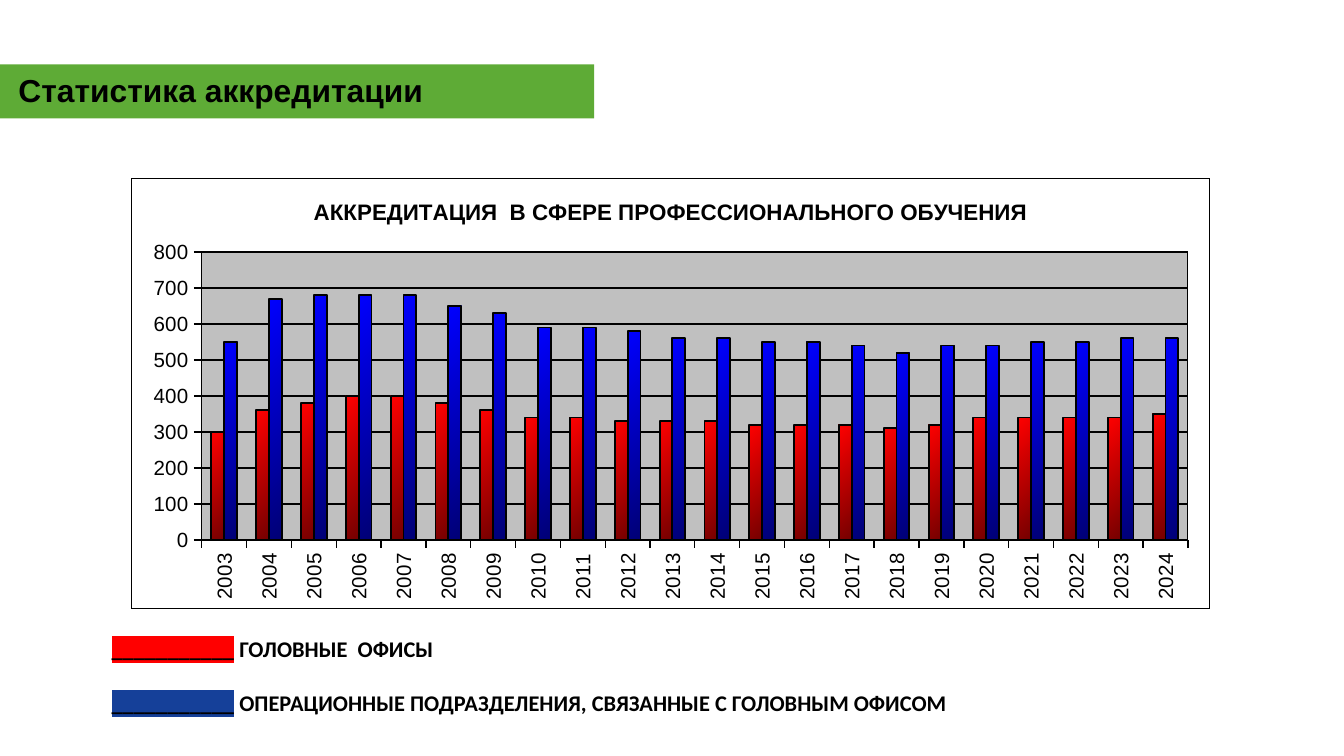
from lxml.etree import SubElement as Sub
from pptx import Presentation
from pptx.chart.data import CategoryChartData as Data
from pptx.dml.color import RGBColor
from pptx.enum.chart import XL_CHART_TYPE as Kind, XL_TICK_MARK as Tick
from pptx.enum.shapes import MSO_SHAPE as Form
from pptx.oxml import parse_xml
from pptx.oxml.ns import nsdecls, qn
from pptx.util import Cm, Pt

BLACK = RGBColor(0, 0, 0)
WHITE = RGBColor(0xFF, 0xFF, 0xFF)
GREEN = RGBColor(0x5E, 0xAB, 0x36)
GRAY = RGBColor(0xC0, 0xC0, 0xC0)
RED = RGBColor(0xFF, 0, 0)
MAROON = RGBColor(0x75, 0, 0)
BLUE = RGBColor(0, 0, 0xFF)
NAVY = RGBColor(0, 0, 0x75)
ROYAL = RGBColor(0x15, 0x40, 0x99)

HEAD = "Статистика аккредитации"
TITLE = "АККРЕДИТАЦИЯ  В СФЕРЕ ПРОФЕССИОНАЛЬНОГО ОБУЧЕНИЯ"
YEARS = [str(year) for year in range(2003, 2025)]
SERIES = [
    ("Series 1", MAROON, RED,
     [300, 360, 380, 400, 400, 380, 360, 340, 340, 330, 330,
      330, 320, 320, 320, 310, 320, 340, 340, 340, 340, 350]),
    ("Series 2", NAVY, BLUE,
     [550, 670, 680, 680, 680, 650, 630, 590, 590, 580, 560,
      560, 550, 550, 540, 520, 540, 540, 550, 550, 560, 560]),
]
KEYS = [
    (RED, "ГОЛОВНЫЕ  ОФИСЫ"),
    (ROYAL, "ОПЕРАЦИОННЫЕ ПОДРАЗДЕЛЕНИЯ, СВЯЗАННЫЕ С ГОЛОВНЫМ ОФИСОМ"),
]
PLOT = {"x": 0.065, "y": 0.17, "w": 0.915, "h": 0.67}


def style(font, size, face="Arial", bold=False):
    font.size, font.name, font.bold = Pt(size), face, bold
    font.color.rgb = BLACK


def write(para, text, size=12, face="Arial", bold=True, mark=None):
    run = para.add_run()
    run.text = text
    style(run.font, size, face, bold)
    if mark is not None:
        tint = parse_xml(f'<a:highlight {nsdecls("a")}><a:srgbClr val="{mark}"/></a:highlight>')
        run.font._element.find(qn("a:latin")).addprevious(tint)


def add_box(slide, place, pad):
    frame = slide.shapes.add_textbox(*map(Cm, place)).text_frame
    frame.word_wrap = True
    frame.margin_left = frame.margin_right = Cm(pad)
    frame.margin_top = frame.margin_bottom = Cm(pad / 2)
    return frame


def area(fill, edge=BLACK):
    return parse_xml(
        f'<c:spPr {nsdecls("c", "a")}><a:solidFill><a:srgbClr val="{fill}"/></a:solidFill>'
        f'<a:ln w="0"><a:solidFill><a:srgbClr val="{edge}"/></a:solidFill></a:ln></c:spPr>')


def set_plot(chart):
    root = chart.element
    root.find(qn("c:chart")).addnext(area(WHITE))
    plot = root.find(".//" + qn("c:plotArea"))
    for old in plot.findall(qn("c:layout")):
        plot.remove(old)
    lay = parse_xml(f'<c:layout {nsdecls("c")}/>')
    hand = Sub(lay, qn("c:manualLayout"))
    Sub(hand, qn("c:layoutTarget"), val="inner")
    for key in "xy":
        Sub(hand, qn(f"c:{key}Mode"), val="edge")
    for key, val in PLOT.items():
        Sub(hand, qn(f"c:{key}"), val=str(val))
    plot.insert(0, lay)
    plot.append(area(GRAY))


def add_bars(slide):
    data = Data()
    data.categories = YEARS
    for name, _, _, vals in SERIES:
        data.add_series(name, vals)
    place = map(Cm, (2.49, 3.38, 20.37, 8.13))
    chart = slide.shapes.add_chart(Kind.COLUMN_CLUSTERED, *place, data).chart
    set_plot(chart)
    style(chart.font, 10)
    chart.has_legend = False
    chart.has_title = True
    write(chart.chart_title.text_frame.paragraphs[0], TITLE)
    chart.chart_title.include_in_layout = False

    bars = chart.plots[0]
    bars.gap_width, bars.overlap, bars.vary_by_categories = 150, 0, False
    for item, (_, dark, light, _) in zip(bars.series, SERIES):
        fill, line = item.format.fill, item.format.line
        fill.gradient()
        fill.gradient_angle = 135
        for stop, tint in zip(fill.gradient_stops, (dark, light)):
            stop.color.rgb = tint
        line.color.rgb, line.width = BLACK, Pt(1)

    cat, val = chart.category_axis, chart.value_axis
    for axis in (cat, val):
        style(axis.tick_labels.font, 11)
        axis.major_tick_mark, axis.minor_tick_mark = Tick.OUTSIDE, Tick.NONE
        axis.format.line.color.rgb, axis.format.line.width = BLACK, Pt(0)
    cat._element.find(qn("c:txPr")).find(qn("a:bodyPr")).set("rot", "-5400000")
    val.minimum_scale, val.maximum_scale, val.major_unit = 0, 800, 100
    grid = val.major_gridlines.format.line
    grid.color.rgb, grid.width = BLACK, Pt(0)


def add_keys(slide):
    frame = add_box(slide, (1.93, 11.91, 21.51, 2.03), 0.18)
    for num, (tint, text) in enumerate(KEYS):
        para = frame.add_paragraph() if num else frame.paragraphs[0]
        if num:
            para.space_before = Pt(14.6)
        write(para, "_" * 11, face="Calibri", mark=tint)
        write(para, " " + text, face="Calibri")


def main():
    deck = Presentation()
    deck.slide_width, deck.slide_height = Cm(25.4), Cm(14.29)
    slide = deck.slides.add_slide(deck.slide_layouts[6])
    band = slide.shapes.add_shape(Form.RECTANGLE, *map(Cm, (0, 1.22, 11.23, 1.02)))
    band.shadow.inherit = False
    band.fill.solid()
    band.fill.fore_color.rgb = GREEN
    band.line.fill.background()
    frame = add_box(slide, (0.1, 1.22, 11.4, 0.89), 0.25)
    write(frame.paragraphs[0], HEAD, size=17)
    add_bars(slide)
    add_keys(slide)
    deck.save("out.pptx")


if __name__ == "__main__":
    main()
